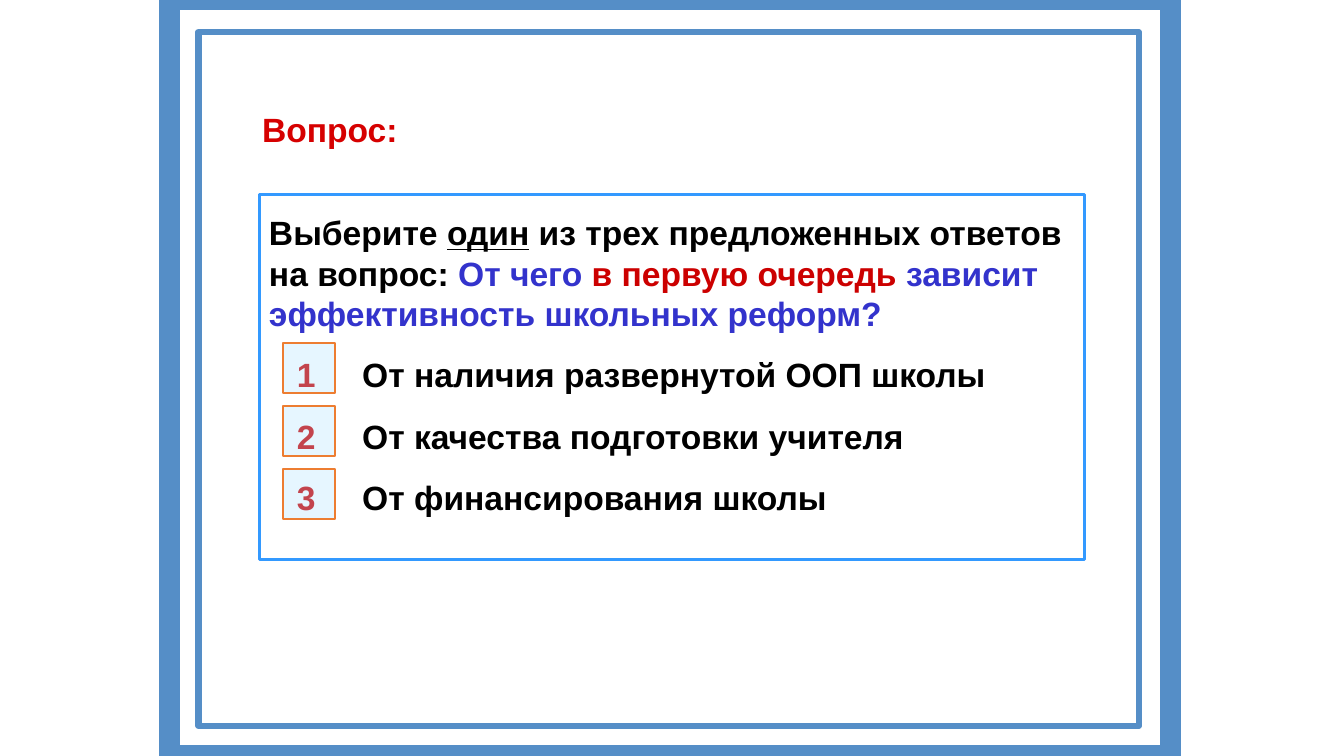
from dataclasses import dataclass

from lxml.etree import SubElement
from pptx import Presentation
from pptx.dml.color import RGBColor
from pptx.enum.shapes import MSO_SHAPE
from pptx.enum.text import MSO_ANCHOR, PP_ALIGN
from pptx.oxml.ns import qn
from pptx.util import Cm, Pt


@dataclass(frozen=True)
class Theme:
    font: str = "Arial"
    text_size: int = 24
    white: str = "FFFFFF"
    black: str = "000000"
    heading: str = "D60000"
    accent: str = "CC0000"
    question: str = "3333CC"
    frame: str = "558EC7"
    panel: str = "3399FF"
    marker_fill: str = "AFE4FF"
    marker_line: str = "ED7D31"


class QuizSlide:
    def __init__(self, page, theme):
        self.page = page
        self.theme = theme

    def rectangle(self, left, top, width, height, line, line_width, fill=None, opacity=100):
        box = self.page.shapes.add_shape(
            MSO_SHAPE.RECTANGLE, Cm(left), Cm(top), Cm(width), Cm(height))
        box.shadow.inherit = False
        box.line.color.rgb = RGBColor.from_string(line)
        box.line.width = Pt(line_width)
        if fill is None:
            box.fill.background()
        else:
            box.fill.solid()
            box.fill.fore_color.rgb = RGBColor.from_string(fill)
        if opacity < 100:
            color = box.fill._xPr.find(qn("a:solidFill"))[0]
            SubElement(color, qn("a:alpha")).set("val", str(opacity * 1000))
        return box

    def style(self, para):
        para.alignment = PP_ALIGN.LEFT
        para.font.name = self.theme.font
        para.font.size = Pt(self.theme.text_size)
        para.font.bold = True

    def span(self, para, text, color, underline=None):
        span = para.add_run()
        span.text = text
        span.font.color.rgb = RGBColor.from_string(color)
        span.font.underline = underline

    def title(self, text, left, top, width, height):
        box = self.page.shapes.title
        box.left, box.top, box.width, box.height = Cm(left), Cm(top), Cm(width), Cm(height)
        box.fill.solid()
        box.fill.fore_color.rgb = RGBColor.from_string(self.theme.white)
        box.text_frame.vertical_anchor = MSO_ANCHOR.MIDDLE
        para = box.text_frame.paragraphs[0]
        self.style(para)
        self.span(para, text, self.theme.heading)

    def question_panel(self, question, answers, left, top, width, height):
        box = self.rectangle(left, top, width, height, self.theme.panel, 2.25, self.theme.white)
        frame = box.text_frame
        frame.word_wrap = True
        frame.vertical_anchor = MSO_ANCHOR.TOP
        frame.margin_top = Cm(0.45)
        para = frame.paragraphs[0]
        self.style(para)
        para.space_after = Pt(15)
        for piece in question:
            self.span(para, *piece)
        for number, answer in enumerate(answers, 1):
            para = frame.add_paragraph()
            self.style(para)
            para.space_after = Pt(15)
            properties = para._p.get_or_add_pPr()
            properties.set("marL", str(Cm(2.35)))
            properties.set("indent", str(Cm(-1.65)))
            self.span(para, f"{number}\t", self.theme.accent)
            self.span(para, answer, self.theme.black)

    def markers(self, count, left, top, width, height, step):
        for index in range(count):
            self.rectangle(left, top + index * step, width, height,
                           self.theme.marker_line, 1.5, self.theme.marker_fill, 30)


def main():
    theme = Theme()
    deck = Presentation()
    deck.slide_width, deck.slide_height = Cm(33.87), Cm(19.05)
    slide = QuizSlide(deck.slides.add_slide(deck.slide_layouts[5]), theme)

    slide.rectangle(4.27, 0, 25.22, 19.05, theme.frame, 15)
    slide.rectangle(5, 0.81, 23.7, 17.48, theme.frame, 4.5)
    slide.title("Вопрос:", 6.35, 2.62, 21, 1.27)

    question = [
        ("Выберите ", theme.black),
        ("один", theme.black, True),
        (" из трех предложенных ответов на вопрос: ", theme.black),
        ("От чего ", theme.question),
        ("в первую очередь", theme.accent),
        (" зависит эффективность школьных реформ?", theme.question),
    ]
    answers = [
        "От наличия развернутой ООП школы",
        "От качества подготовки учителя",
        "От финансирования школы",
    ]
    slide.question_panel(question, answers, 6.53, 4.9, 20.8, 9.19)
    slide.markers(len(answers), 7.14, 8.64, 1.3, 1.27, 1.59)
    deck.save("out.pptx")


if __name__ == "__main__":
    main()
